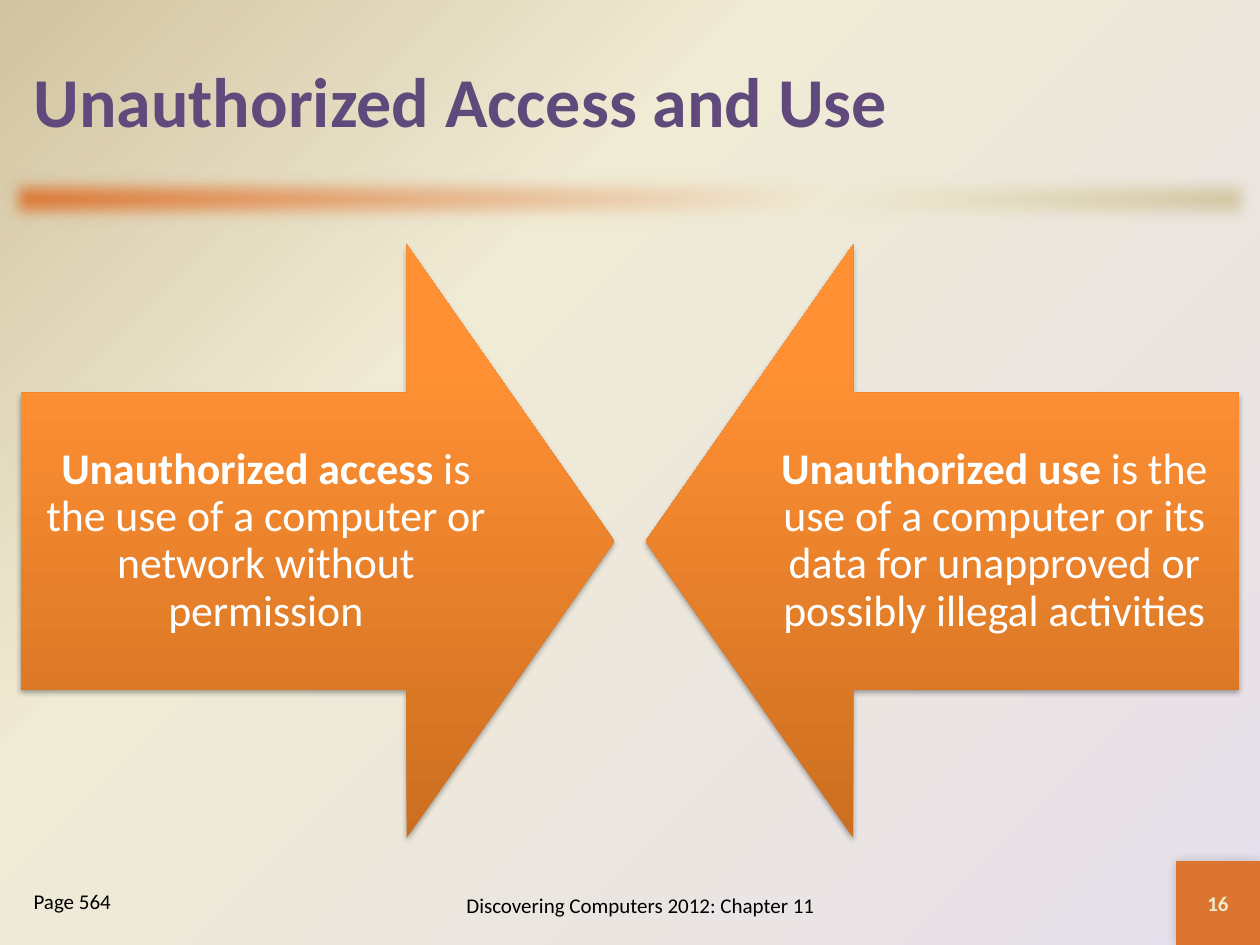
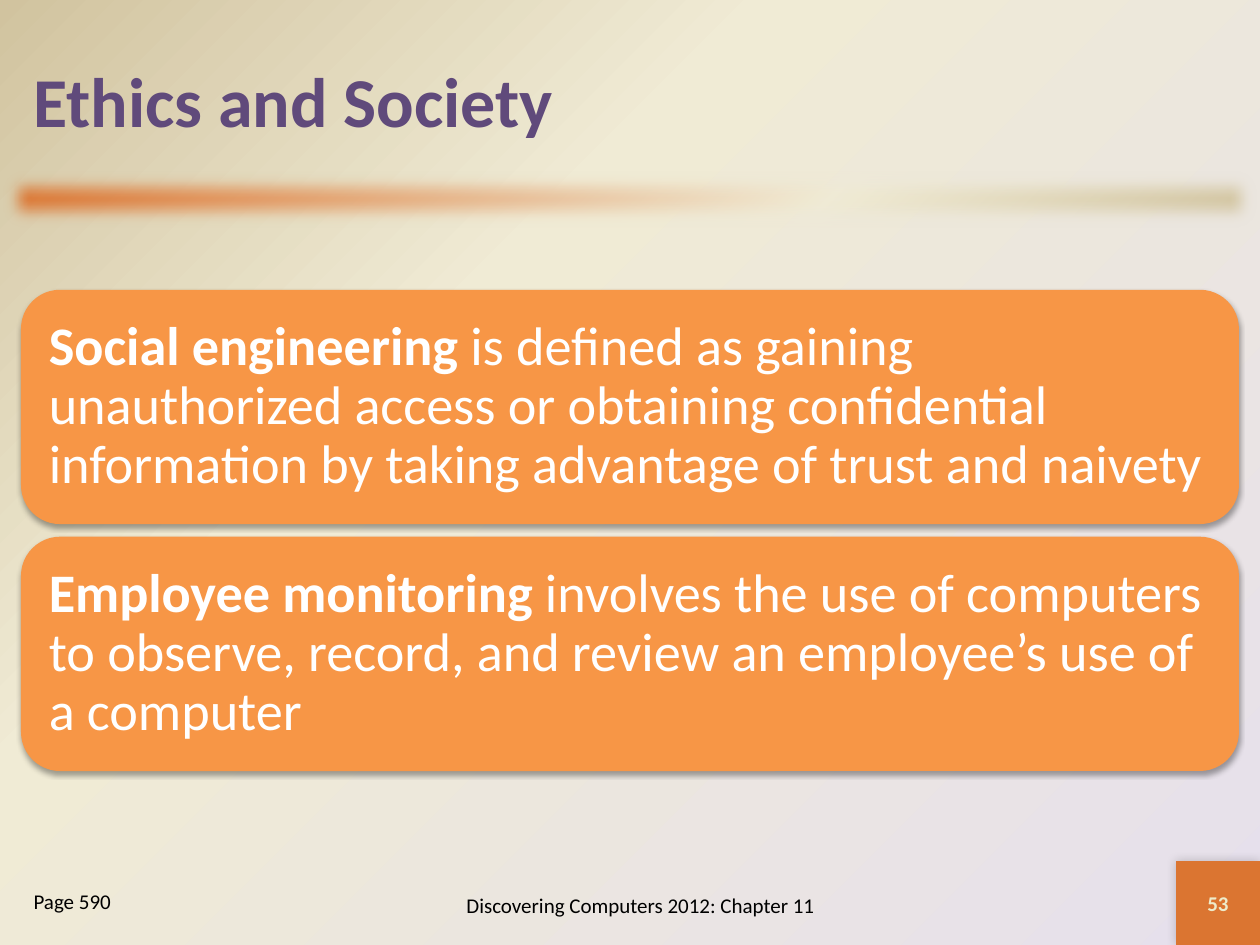
from dataclasses import dataclass

from lxml import etree
from pptx import Presentation
from pptx.dml.color import RGBColor
from pptx.enum.shapes import MSO_SHAPE as SHAPE
from pptx.enum.text import MSO_ANCHOR as ANCHOR, MSO_AUTO_SIZE as AUTO, PP_ALIGN as ALIGN
from pptx.oxml import parse_xml
from pptx.oxml.ns import nsdecls, qn
from pptx.util import Emu, Inches, Pt

COLS, ROWS = 60, 45
UNIT = Inches(10) / COLS


@dataclass(frozen=True)
class Theme:
    font: str = "Calibri"
    title: str = "604A7B"
    accent: str = "DB7531"
    card: str = "F79646"
    light: str = "FFFFFF"
    dark: str = "000000"
    number: str = "EEEBCA"
    title_size: int = 40
    card_size: int = 31
    arrow_size: int = 25
    small_size: int = 12
    backdrop: tuple = ((0, "E6E0EC"), (65, "F0EBD5"), (100, "D1C39F"))
    band: tuple = ((0, "DB7531"), (65, "F0EBD5"), (100, "D1C39F"))
    arrow: tuple = ((0, "CC6E20"), (80, "FF9034"), (100, "FF9136"))


@dataclass(frozen=True)
class Box:
    col: float
    row: float
    cols: float
    rows: float

    def emu(self):
        return [Emu(round(n * UNIT)) for n in (self.col, self.row, self.cols, self.rows)]


T = Theme()
TITLE = Box(1, 1, 58, 7.5)
BAND = Box(0, 8, COLS, 3)
CORNER = Box(56, 41, 4, 4)
FOOTER = Box(18, 41.46, 25, 3.3)
PAGE = Box(1, 42, 11, 3)
ARROWS = Box(1, 11.64, 58, 28.26)
CARDS = Box(1, 13.8, 58, 22.92)
CARD_GAP = 0.6

RADIAL = '<a:path path="circle"><a:fillToRect l="100000" t="100000"/></a:path>'


def linear(angle):
    return f'<a:lin ang="{angle * 60000}" scaled="0"/>'


def set_gradient(props, stops, direction):
    gs = "".join(
        f'<a:gs pos="{pos * 1000}"><a:srgbClr val="{color}"/></a:gs>' for pos, color in stops
    )
    grad = parse_xml(
        f'<a:gradFill {nsdecls("a")} rotWithShape="1"><a:gsLst>{gs}</a:gsLst>{direction}</a:gradFill>'
    )
    props.replace(props.find(qn("a:solidFill")), grad)


def add_effect(sp, name, **attrs):
    effects = sp._element.spPr.find(qn("a:effectLst"))
    return etree.SubElement(effects, qn(f"a:{name}"), {k: str(v) for k, v in attrs.items()})


def add_shadow(sp, alpha, blur, dist, angle):
    shadow = add_effect(sp, "outerShdw", blurRad=Pt(blur), dist=Pt(dist),
                        dir=angle * 60000, rotWithShape=0)
    color = etree.SubElement(shadow, qn("a:srgbClr"), val=T.dark)
    etree.SubElement(color, qn("a:alpha"), val=str(alpha * 1000))


def add_block(slide, kind, box, color):
    sp = slide.shapes.add_shape(kind, *box.emu())
    sp.shadow.inherit = False
    sp.fill.solid()
    sp.fill.fore_color.rgb = RGBColor.from_string(color)
    sp.line.fill.background()
    return sp


def write(sp, runs, size, color, align=ALIGN.LEFT, anchor=ANCHOR.MIDDLE, inset=None, spacing=None):
    tf = sp.text_frame
    tf.word_wrap = True
    tf.auto_size = AUTO.NONE
    tf.vertical_anchor = anchor
    if inset is not None:
        tf.margin_left = tf.margin_right = tf.margin_top = tf.margin_bottom = Inches(inset)
    p = tf.paragraphs[0]
    p.alignment = align
    p.space_before = Pt(0)
    if spacing:
        p.line_spacing = spacing
    for text, bold in runs:
        r = p.add_run()
        r.text = text
        r.font.name = T.font
        r.font.size = Pt(size)
        r.font.bold = bold
        r.font.color.rgb = RGBColor.from_string(color)


def place(sp, box):
    sp.left, sp.top, sp.width, sp.height = box.emu()


def decorate_master(prs, slide):
    master = prs.slide_master
    master.background.fill.solid()
    set_gradient(master.element.find(f".//{qn('p:bgPr')}"), T.backdrop, RADIAL)

    band = add_block(slide, SHAPE.RECTANGLE, BAND, T.accent)
    set_gradient(band._element.spPr, T.band, linear(45))
    add_effect(band, "softEdge", rad=Pt(10))
    corner = add_block(slide, SHAPE.RECTANGLE, CORNER, T.accent)
    add_shadow(corner, 20, 6, 0, 225)
    for i, sp in enumerate((band, corner)):
        sp._element.nvSpPr.cNvPr.set("id", str(101 + i))
        master.element.cSld.spTree.insert(2 + i, sp._element)


def add_frame(slide, title, page, number):
    place(slide.shapes.title, TITLE)
    write(slide.shapes.title, [(title, True)], T.title_size, T.title)

    ref = slide.placeholders[1]
    place(ref, PAGE)
    pPr = ref.text_frame.paragraphs[0]._p.get_or_add_pPr()
    pPr.set("marL", "0")
    pPr.set("indent", "0")
    etree.SubElement(pPr, qn("a:buNone"))
    write(ref, [(page, False)], T.small_size, T.dark, anchor=ANCHOR.TOP)

    labels = (
        (FOOTER, "Discovering Computers 2012: Chapter 11", T.dark, False),
        (CORNER, number, T.number, True),
    )
    for box, text, color, bold in labels:
        tb = slide.shapes.add_textbox(*box.emu())
        write(tb, [(text, bold)], T.small_size, color, ALIGN.CENTER)


def add_facing_arrows(slide, box, left, right):
    side = box.rows
    sides = (
        (SHAPE.RIGHT_ARROW, box.col, left),
        (SHAPE.LEFT_ARROW, box.col + box.cols - side, right),
    )
    for kind, col, (term, rest) in sides:
        sp = add_block(slide, kind, Box(col, box.row, side, side), T.accent)
        sp.adjustments[0], sp.adjustments[1] = 0.5, 0.35
        set_gradient(sp._element.spPr, T.arrow, linear(270))
        add_shadow(sp, 35, 3.1, 1.8, 90)
        write(sp, [(term, True), (rest, False)], T.arrow_size, T.light,
              ALIGN.CENTER, inset=0.19, spacing=0.9)


def add_cards(slide, box, cards):
    height = (box.rows - CARD_GAP * (len(cards) - 1)) / len(cards)
    for i, (term, rest) in enumerate(cards):
        row = box.row + i * (height + CARD_GAP)
        sp = add_block(slide, SHAPE.ROUNDED_RECTANGLE, Box(box.col, row, box.cols, height), T.card)
        add_shadow(sp, 35, 3.1, 1.8, 90)
        write(sp, [(term, True), (rest, False)], T.card_size, T.light, inset=0.13, spacing=0.9)


def main():
    prs = Presentation()
    prs.slide_width, prs.slide_height = Emu(round(COLS * UNIT)), Emu(round(ROWS * UNIT))
    layout = prs.slide_layouts[1]

    access = prs.slides.add_slide(layout)
    decorate_master(prs, access)
    add_frame(access, "Unauthorized Access and Use", "Page 564", "16")
    add_facing_arrows(
        access, ARROWS,
        ("Unauthorized access", " is the use of a computer or network without permission"),
        ("Unauthorized use",
         " is the use of a computer or its data for unapproved or possibly illegal activities"),
    )

    ethics = prs.slides.add_slide(layout)
    add_frame(ethics, "Ethics and Society", "Page 590", "53")
    add_cards(ethics, CARDS, (
        ("Social engineering",
         " is defined as gaining unauthorized access or obtaining confidential "
         "information by taking advantage of trust and naivety"),
        ("Employee monitoring",
         " involves the use of computers to observe, record, and review "
         "an employee’s use of a computer"),
    ))

    prs.save("out.pptx")


if __name__ == "__main__":
    main()
